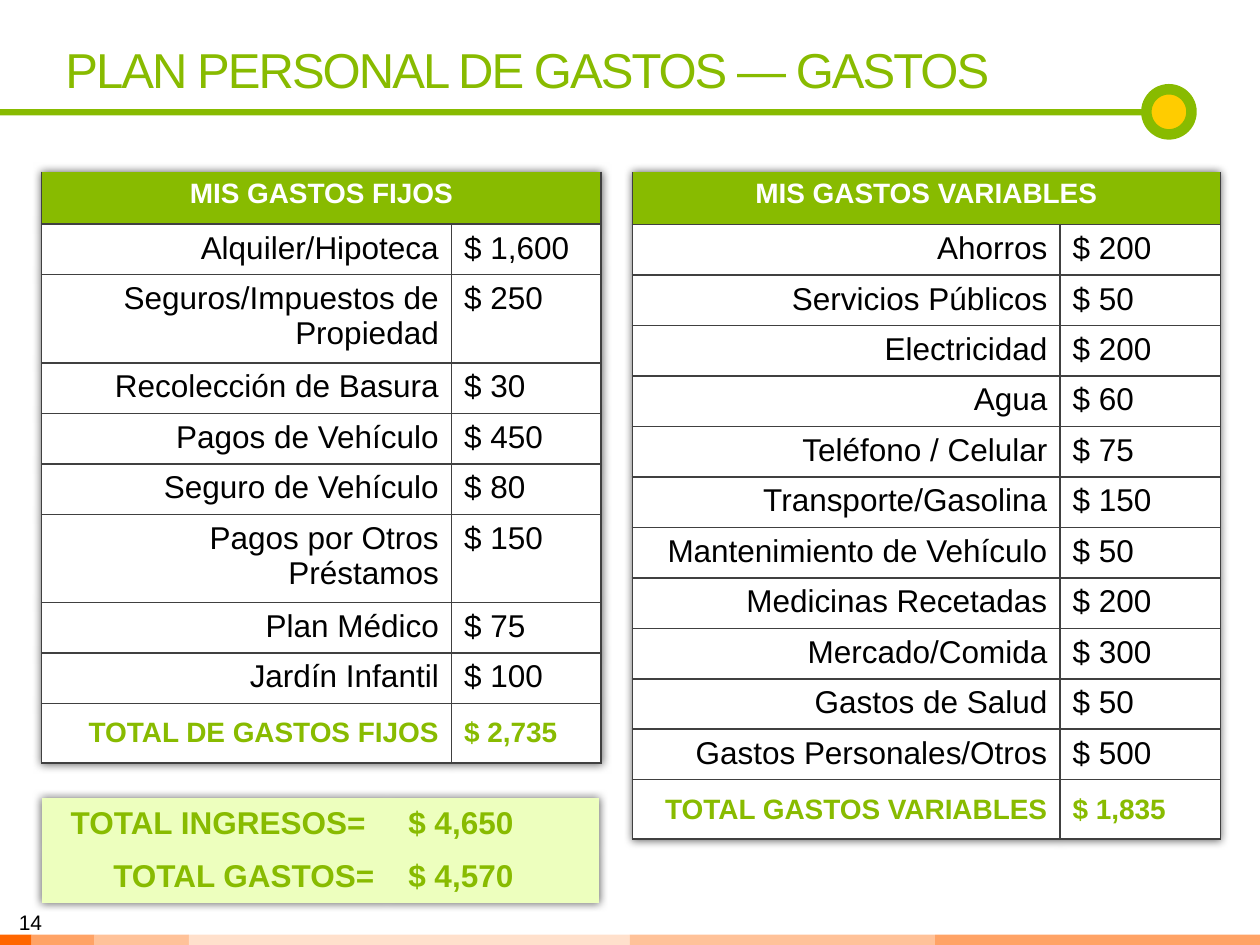
from dataclasses import dataclass

import pptx
import pptx.dml.color
import pptx.enum.shapes
import pptx.enum.text
import pptx.oxml
import pptx.oxml.ns
import pptx.util
from pptx.dml.color import RGBColor
from pptx.util import Cm, Pt

GREEN = RGBColor(0x88, 0xBB, 0x00)
PALE_GREEN = RGBColor(0xED, 0xFF, 0xBE)
YELLOW = RGBColor(0xFF, 0xCC, 0x00)
WHITE = RGBColor(0xFF, 0xFF, 0xFF)
BLACK = RGBColor(0x00, 0x00, 0x00)
GRAY = RGBColor(0x40, 0x40, 0x40)
ORANGE = RGBColor(0xFF, 0x66, 0x00)
ORANGE_60 = RGBColor(0xFF, 0xA3, 0x66)
ORANGE_40 = RGBColor(0xFF, 0xC2, 0x99)
ORANGE_20 = RGBColor(0xFF, 0xE0, 0xCC)

FONT = "Arial"
NO_STYLE = "{2D5ABB26-0587-4C30-8999-92F81FD0307C}"
LEFT, CENTER, RIGHT = (pptx.enum.text.PP_ALIGN.LEFT, pptx.enum.text.PP_ALIGN.CENTER,
                       pptx.enum.text.PP_ALIGN.RIGHT)
MIDDLE = pptx.enum.text.MSO_ANCHOR.MIDDLE
RECTANGLE = pptx.enum.shapes.MSO_SHAPE.RECTANGLE
OVAL = pptx.enum.shapes.MSO_SHAPE.OVAL
HEADER_HEIGHT, ITEM_HEIGHT, WRAPPED_HEIGHT, TOTAL_HEIGHT = 1.06, 0.97, 1.68, 1.2


@dataclass
class Expense:
    label: str
    amount: str
    height: float = ITEM_HEIGHT


@dataclass
class Budget:
    heading: str
    left: float
    top: float
    widths: tuple[float, float]
    expenses: list[Expense]
    total: Expense


VARIABLE = Budget(
    "MIS GASTOS VARIABLES", 12.75, 3.47, (8.62, 3.23),
    [Expense("Ahorros", "$ 200"),
     Expense("Servicios Públicos", "$ 50"),
     Expense("Electricidad", "$ 200"),
     Expense("Agua", "$ 60"),
     Expense("Teléfono / Celular", "$ 75"),
     Expense("Transporte/Gasolina", "$ 150"),
     Expense("Mantenimiento de Vehículo", "$ 50"),
     Expense("Medicinas Recetadas", "$ 200"),
     Expense("Mercado/Comida", "$ 300"),
     Expense("Gastos de Salud", "$ 50"),
     Expense("Gastos Personales/Otros", "$ 500")],
    Expense("TOTAL GASTOS VARIABLES", "$ 1,835", TOTAL_HEIGHT))

FIXED = Budget(
    "MIS GASTOS FIJOS", 0.84, 3.46, (8.26, 3.02),
    [Expense("Alquiler/Hipoteca", "$ 1,600"),
     Expense("Seguros/Impuestos de Propiedad", "$ 250", WRAPPED_HEIGHT),
     Expense("Recolección de Basura", "$ 30"),
     Expense("Pagos de Vehículo", "$ 450"),
     Expense("Seguro de Vehículo", "$ 80"),
     Expense("Pagos por Otros Préstamos", "$ 150", WRAPPED_HEIGHT),
     Expense("Plan Médico", "$ 75"),
     Expense("Jardín Infantil", "$ 100")],
    Expense("TOTAL DE GASTOS FIJOS", "$ 2,735", TOTAL_HEIGHT))

SUMMARY = [Expense("TOTAL INGRESOS=", "$ 4,650", 1.06),
           Expense("TOTAL GASTOS=", "$ 4,570", 1.06)]


def write(paragraph, text: str, size: float, color: RGBColor, bold=False, align=LEFT):
    paragraph.text = text
    paragraph.alignment = align
    font = paragraph.font
    font.name, font.size, font.bold = FONT, Pt(size), bold
    font.color.rgb = color


def add_borders(cell, sides: str):
    properties = cell._tc.get_or_add_tcPr()
    for side in sides:
        properties.append(pptx.oxml.parse_xml(
            f'<a:ln{side} {pptx.oxml.ns.nsdecls("a")} w="12700"><a:solidFill>'
            f'<a:srgbClr val="{GRAY}"/></a:solidFill></a:ln{side}>'))


def fill_cell(cell, color: RGBColor):
    cell.fill.solid()
    cell.fill.fore_color.rgb = color


def add_shadowed_table(slide, left: float, top: float, widths: tuple[float, float],
                       heights: list[float]):
    table = slide.shapes.add_table(len(heights), len(widths), Cm(left), Cm(top),
                                   Cm(sum(widths)), Cm(sum(heights))).table
    table.first_row = table.horz_banding = False
    for column, width in zip(table.columns, widths):
        column.width = Cm(width)
    for row, height in zip(table.rows, heights):
        row.height = Cm(height)
    properties = table._tbl.tblPr
    properties.find(pptx.oxml.ns.qn("a:tableStyleId")).text = NO_STYLE
    properties.insert(0, pptx.oxml.parse_xml(
        f'<a:effectLst {pptx.oxml.ns.nsdecls("a")}><a:outerShdw blurRad="63500" dist="0" '
        'algn="ctr" rotWithShape="0"><a:srgbClr val="000000"><a:alpha val="60000"/>'
        '</a:srgbClr></a:outerShdw></a:effectLst>'))
    return table


def add_budget(slide, budget: Budget):
    lines = [*budget.expenses, budget.total]
    table = add_shadowed_table(slide, budget.left, budget.top, budget.widths,
                               [HEADER_HEIGHT] + [line.height for line in lines])
    heading = table.cell(0, 0)
    heading.merge(table.cell(0, 1))
    write(heading.text_frame.paragraphs[0], budget.heading, 16, WHITE, True, CENTER)
    for column in range(2):
        add_borders(table.cell(0, column), "LRB")
        fill_cell(table.cell(0, column), GREEN)
    for row, line in enumerate(lines, start=1):
        is_total = line is budget.total
        for column, (text, align) in enumerate([(line.label, RIGHT), (line.amount, LEFT)]):
            cell = table.cell(row, column)
            add_borders(cell, "LRTB")
            fill_cell(cell, WHITE)
            if is_total:
                cell.vertical_anchor = MIDDLE
            write(cell.text_frame.paragraphs[0], text, 16 if is_total else 18,
                  GREEN if is_total else BLACK, is_total, align)


def add_summary(slide):
    table = add_shadowed_table(slide, 0.84, 16.08, (6.96, 4.27),
                               [line.height for line in SUMMARY])
    for row, line in enumerate(SUMMARY):
        for column, (text, align) in enumerate([(line.label, RIGHT), (line.amount, LEFT)]):
            cell = table.cell(row, column)
            fill_cell(cell, PALE_GREEN)
            cell.vertical_anchor = MIDDLE
            write(cell.text_frame.paragraphs[0], text, 18, GREEN, True, align)
        table.cell(row, 1).margin_left = Cm(0.43)
    table.cell(0, 0).margin_right = Cm(0.43)


def add_solid(slide, kind, left: float, top: float, width: float, height: float,
              color: RGBColor):
    solid = slide.shapes.add_shape(kind, Cm(left), Cm(top), Cm(width), Cm(height))
    solid.shadow.inherit = False
    solid.fill.solid()
    solid.fill.fore_color.rgb = color
    solid.line.fill.background()
    return solid


def add_text(slide, left: float, top: float, width: float, height: float):
    frame = slide.shapes.add_textbox(Cm(left), Cm(top), Cm(width), Cm(height)).text_frame
    frame.word_wrap = True
    return frame


def main():
    deck = pptx.Presentation()
    deck.slide_width, deck.slide_height = Cm(25.4), Cm(19.05)
    slide = deck.slides.add_slide(deck.slide_layouts[6])

    # Footer band and page number
    edges = [0, 0.64, 1.9, 3.81, 12.7, 18.85, 25.4]
    tints = [ORANGE, ORANGE_60, ORANGE_40, ORANGE_20, ORANGE_40, ORANGE_60]
    for start, end, tint in zip(edges, edges[1:], tints):
        add_solid(slide, RECTANGLE, start, 18.84, end - start, 0.21, tint)
    page_number = add_text(slide, -0.64, 18.21, 3.81, 1.06)
    page_number.margin_left = Cm(1.02)
    write(page_number.paragraphs[0], "14", 12, BLACK)

    # Expense tables and totals
    add_budget(slide, VARIABLE)
    add_budget(slide, FIXED)
    add_summary(slide)

    # Title rule with its round end
    add_solid(slide, RECTANGLE, 0, 2.2, 23.11, 0.13, GREEN)
    rule_end = add_solid(slide, OVAL, 23.11, 1.8, 0.91, 0.91, YELLOW)
    rule_end.line.color.rgb = GREEN
    rule_end.line.width = Pt(6)

    # Title
    title = add_text(slide, 1.07, 0.56, 24.28, 5.16)
    title.margin_top = Cm(0.23)
    write(title.paragraphs[0], "PLAN PERSONAL DE GASTOS — GASTOS", 28, GREEN)
    title.paragraphs[0].runs[0]._r.get_or_add_rPr().set("spc", "-110")

    deck.save("out.pptx")


if __name__ == "__main__":
    main()
